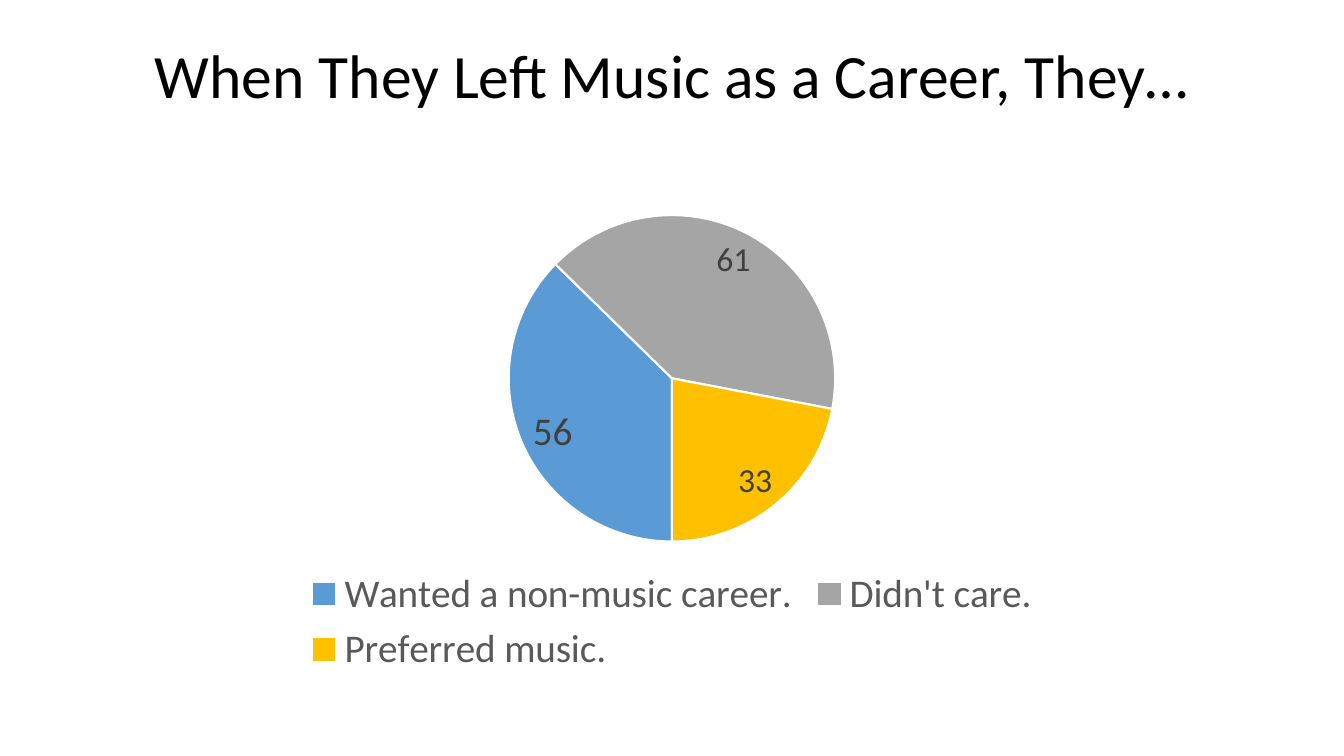
from lxml.etree import SubElement
from pptx import Presentation
from pptx.chart.data import CategoryChartData
from pptx.dml.color import RGBColor
from pptx.enum.chart import XL_CHART_TYPE, XL_LABEL_POSITION, XL_LEGEND_POSITION
from pptx.enum.text import MSO_ANCHOR, MSO_AUTO_SIZE, PP_ALIGN
from pptx.oxml import parse_xml
from pptx.oxml.ns import nsdecls, qn
from pptx.util import Pt

FONT = "Calibri"
BLACK = RGBColor(0x00, 0x00, 0x00)
WHITE = RGBColor(0xFF, 0xFF, 0xFF)
LABEL_GRAY = RGBColor(0x40, 0x40, 0x40)
LEGEND_GRAY = RGBColor(0x59, 0x59, 0x59)
BLUE = RGBColor(0x5B, 0x9B, 0xD5)
ORANGE = RGBColor(0xED, 0x7D, 0x31)
GRAY = RGBColor(0xA5, 0xA5, 0xA5)
GOLD = RGBColor(0xFF, 0xC0, 0x00)

LEFT, WIDTH = Pt(66), Pt(828)
ANSWERS = [
    ("Wanted a non-music career.", 56, BLUE),
    ("", None, ORANGE),
    ("Didn't care.", 61, GRAY),
    ("Preferred music.", 33, GOLD),
]


def style_font(font, size, color):
    font.name = FONT
    font.size = Pt(size)
    font.bold = False
    font.color.rgb = color


def set_title(title, text):
    title.left, title.top, title.width, title.height = LEFT, Pt(28.75), WIDTH, Pt(104.4)
    frame = title.text_frame
    frame.text = text
    frame.auto_size = MSO_AUTO_SIZE.NONE
    frame.vertical_anchor = MSO_ANCHOR.TOP
    heading = frame.paragraphs[0]
    heading.alignment = PP_ALIGN.CENTER
    heading.line_spacing = 0.9
    style_font(heading.runs[0].font, 44, BLACK)


def add_answer_pie(slide):
    answers = CategoryChartData()
    answers.categories = [name for name, _, _ in ANSWERS]
    answers.add_series("Series 1", [count for _, count, _ in ANSWERS])
    pie = slide.shapes.add_chart(
        XL_CHART_TYPE.PIE, LEFT, Pt(143.75), WIDTH, Pt(342.6), answers
    ).chart
    pie.has_title = False
    style_font(pie.font, 10, BLACK)
    plot = pie.plots[0]
    plot.vary_by_categories = True
    color_slices(plot.series[0])
    label_slices(plot.series[0])
    first_angle = SubElement(pie.element.find(".//" + qn("c:pieChart")), qn("c:firstSliceAng"))
    first_angle.set("val", "180")
    add_legend(pie)


def color_slices(series):
    for index, (_, _, color) in enumerate(ANSWERS):
        slice_format = series.points[index].format
        slice_format.fill.solid()
        slice_format.fill.fore_color.rgb = color
        slice_format.line.color.rgb = WHITE
        slice_format.line.width = Pt(1.5)


def label_slices(series):
    counts = series.data_labels
    counts.show_value = True
    counts.position = XL_LABEL_POSITION.BEST_FIT
    style_font(counts.font, 24, LABEL_GRAY)
    non_music = series.points[0].data_label
    style_font(non_music.font, 28, LABEL_GRAY)
    non_music.position = XL_LABEL_POSITION.BEST_FIT


def add_legend(pie):
    pie.has_legend = True
    legend = pie.legend
    legend.position = XL_LEGEND_POSITION.BOTTOM
    legend.include_in_layout = False
    style_font(legend.font, 28, LEGEND_GRAY)
    hidden_entry = parse_xml(
        f'<c:legendEntry {nsdecls("c")}><c:idx val="1"/><c:delete val="1"/></c:legendEntry>'
    )
    pie.element.find(".//" + qn("c:legendPos")).addnext(hidden_entry)


def main():
    deck = Presentation()
    deck.slide_width, deck.slide_height = Pt(960), Pt(540)
    slide = deck.slides.add_slide(deck.slide_layouts[5])
    set_title(slide.shapes.title, "When They Left Music as a Career, They…")
    add_answer_pie(slide)
    deck.save("out.pptx")


if __name__ == "__main__":
    main()
